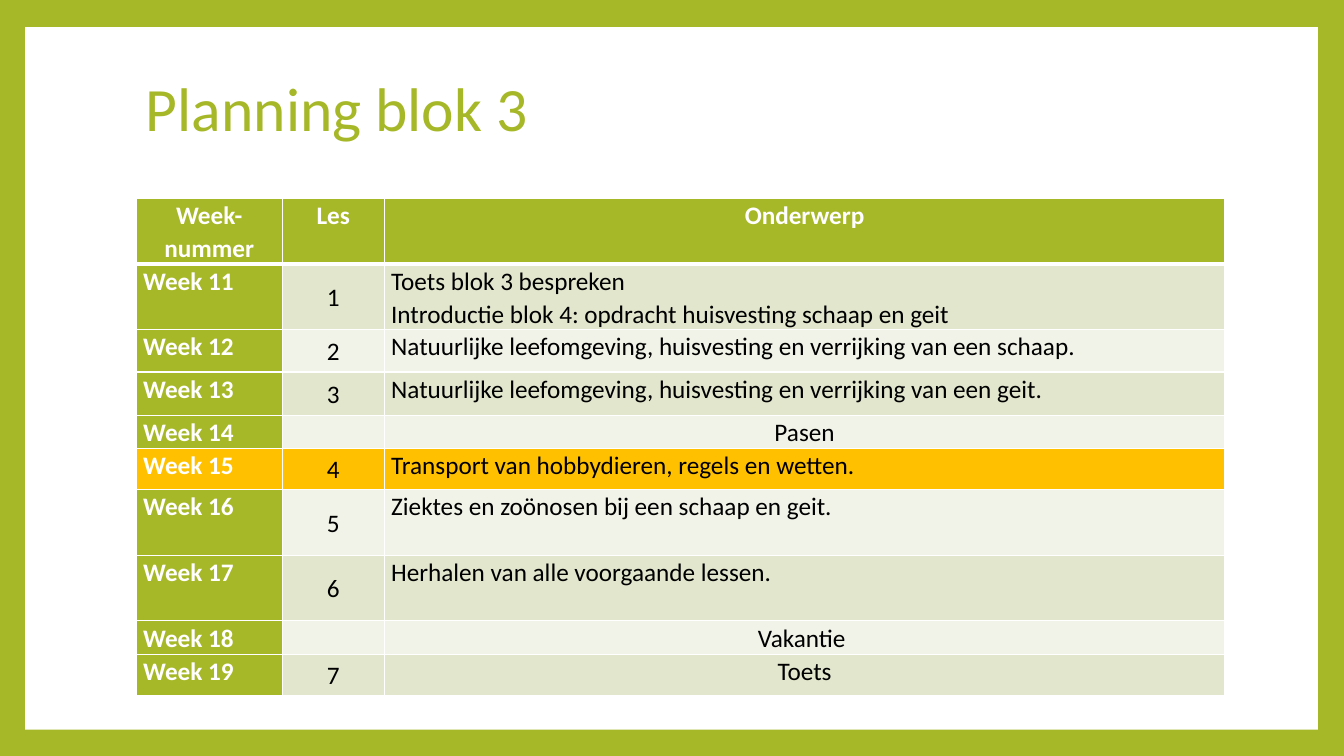
from lxml import etree
from pptx import Presentation
from pptx.dml.color import RGBColor
from pptx.enum import shapes, text
from pptx.oxml import ns
from pptx.util import Inches, Pt

GREEN = RGBColor(0xA6, 0xB7, 0x27)
AMBER = RGBColor(0xFF, 0xC0, 0x00)
WHITE = RGBColor(0xFF, 0xFF, 0xFF)
BLACK = RGBColor(0x00, 0x00, 0x00)
BAND_DARK = RGBColor(0xE1, 0xE6, 0xCD)
BAND_LIGHT = RGBColor(0xF1, 0xF3, 0xE8)

LEFT, CENTER = text.PP_ALIGN.LEFT, text.PP_ALIGN.CENTER
TOP, MIDDLE = text.MSO_ANCHOR.TOP, text.MSO_ANCHOR.MIDDLE

COLUMN_WIDTHS = [1.45, 1.01, 8.34]
HEADER_HEIGHT = 0.65
HEADINGS = ["Week-\nnummer", "Les", "Onderwerp"]
CURRENT_WEEK = 15
# Week, lesson, topic, topic alignment, row height
LESSONS = [
    (11, "1", "Toets blok 3 bespreken\n"
     "Introductie blok 4: opdracht huisvesting schaap en geit", LEFT, 0.65),
    (12, "2", "Natuurlijke leefomgeving, huisvesting en verrijking van een schaap.", LEFT, 0.42),
    (13, "3", "Natuurlijke leefomgeving, huisvesting en verrijking van een geit.", LEFT, 0.43),
    (14, "", "Pasen", CENTER, 0.33),
    (15, "4", "Transport van hobbydieren, regels en wetten.", LEFT, 0.41),
    (16, "5", "Ziektes en zoönosen bij een schaap en geit.", LEFT, 0.65),
    (17, "6", "Herhalen van alle voorgaande lessen.", LEFT, 0.65),
    (18, "", "Vakantie\u00a0", CENTER, 0.33),
    (19, "7", "Toets", CENTER, 0.41),
]


def write_text(frame, content, size=18, color=BLACK, bold=False, align=LEFT, spacing=1.07):
    """Write one paragraph for each line of the content."""
    for index, line in enumerate(content.split("\n")):
        paragraph = frame.add_paragraph() if index else frame.paragraphs[0]
        paragraph.alignment = align
        paragraph.line_spacing = spacing
        paragraph.font.size = Pt(size)
        if line:
            run = paragraph.add_run()
            run.text = line
            run.font.name = "Calibri"
            run.font.size = Pt(size)
            run.font.bold = bold
            run.font.color.rgb = color


def set_borders(cell, top=1, bottom=1):
    """Draw white lines around a cell, with widths in points."""
    properties = cell._tc.get_or_add_tcPr()
    widths = {"lnL": 1, "lnR": 1, "lnT": top, "lnB": bottom}
    for index, (side, width) in enumerate(widths.items()):
        line = etree.Element(ns.qn(f"a:{side}"), w=str(Pt(width)))
        fill = etree.SubElement(line, ns.qn("a:solidFill"))
        etree.SubElement(fill, ns.qn("a:srgbClr"), val=str(WHITE))
        properties.insert(index, line)


def fill_cell(cell, content, fill, anchor=TOP, top=1, bottom=1, **text_format):
    cell.margin_left = cell.margin_right = Inches(0.07)
    cell.margin_top = cell.margin_bottom = 0
    cell.vertical_anchor = anchor
    cell.fill.solid()
    cell.fill.fore_color.rgb = fill
    set_borders(cell, top, bottom)
    write_text(cell.text_frame, content, **text_format)


def add_frame(slide):
    """Green background with a white panel inside it."""
    slide.background.fill.solid()
    slide.background.fill.fore_color.rgb = GREEN
    panel = slide.shapes.add_shape(shapes.MSO_SHAPE.RECTANGLE, Inches(0.25), Inches(0.27),
                                   Inches(12.82), Inches(6.97))
    panel.shadow.inherit = False
    panel.fill.solid()
    panel.fill.fore_color.rgb = WHITE
    panel.line.fill.background()


def add_title(slide, content):
    title = slide.shapes.add_textbox(Inches(1.35), Inches(0.37), Inches(10.8), Inches(1.48))
    title.text_frame.word_wrap = True
    title.text_frame.vertical_anchor = MIDDLE
    write_text(title.text_frame, content, size=44, color=GREEN, spacing=0.9)


def add_planning(slide):
    heights = [HEADER_HEIGHT] + [lesson[-1] for lesson in LESSONS]
    planning = slide.shapes.add_table(len(heights), len(COLUMN_WIDTHS), Inches(1.35), Inches(1.97),
                                      Inches(sum(COLUMN_WIDTHS)), Inches(sum(heights))).table
    for column, width in zip(planning.columns, COLUMN_WIDTHS):
        column.width = Inches(width)
    for row, height in zip(planning.rows, heights):
        row.height = Inches(height)

    # Header row
    for column, heading in enumerate(HEADINGS):
        fill_cell(planning.cell(0, column), heading, GREEN, bottom=3,
                  color=WHITE, bold=True, align=CENTER)

    # One row per week, banded, with the current week highlighted
    for row, (week, lesson, topic, align, _) in enumerate(LESSONS, start=1):
        current = week == CURRENT_WEEK
        band = AMBER if current else BAND_DARK if row % 2 else BAND_LIGHT
        top = 3 if row == 1 else 1
        fill_cell(planning.cell(row, 0), f"Week {week}", AMBER if current else GREEN,
                  top=top, color=WHITE, bold=True)
        fill_cell(planning.cell(row, 1), lesson, band, anchor=MIDDLE, top=top, align=CENTER)
        fill_cell(planning.cell(row, 2), topic, band, top=top, align=align)


def main():
    deck = Presentation()
    deck.slide_width, deck.slide_height = Inches(13.33), Inches(7.5)
    slide = deck.slides.add_slide(deck.slide_layouts[6])
    add_frame(slide)
    add_title(slide, "Planning blok 3")
    add_planning(slide)
    deck.save("out.pptx")


if __name__ == "__main__":
    main()
